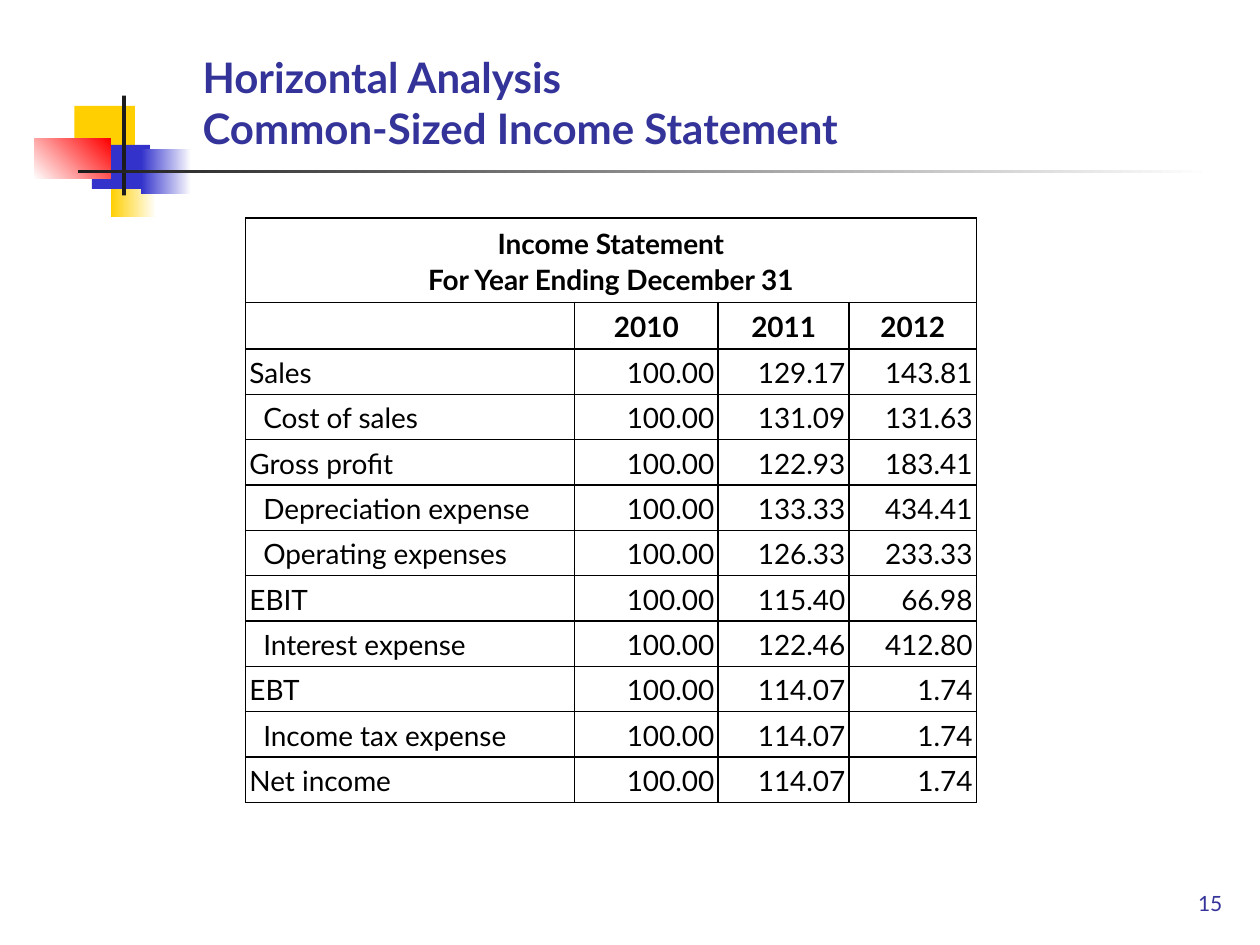
from dataclasses import dataclass
from lxml import etree
from pptx import Presentation
from pptx import util as u
from pptx.dml.color import RGBColor
from pptx.enum import shapes, text
from pptx.oxml import ns


@dataclass(frozen=True)
class Theme:
    font: str = "Lato"
    title: str = "333399"
    ink: str = "000000"
    bar: str = "1C1C1C"
    yellow: str = "FFCF01"
    blue: str = "3333CC"
    red: str = "FF0000"
    white: str = "FFFFFF"
    title_size: int = 24
    body_size: int = 16
    number_size: int = 12


T = Theme()


def add_run(p, words, size, color, bold=False):
    r = p.add_run()
    r.text = words
    r.font.name = T.font
    r.font.size = u.Pt(size)
    r.font.bold = bold
    r.font.color.rgb = RGBColor.from_string(color)


def add_border(cell):
    tcPr = cell._tc.get_or_add_tcPr()
    for side in ("lnL", "lnR", "lnT", "lnB"):
        ln = etree.SubElement(tcPr, ns.qn(f"a:{side}"), w=str(u.Pt(1)))
        fill = etree.SubElement(ln, ns.qn("a:solidFill"))
        etree.SubElement(fill, ns.qn("a:srgbClr"), val=T.ink)


prs = Presentation()
prs.slide_width, prs.slide_height = u.Inches(10), u.Inches(7.5)
s = prs.slides.add_slide(prs.slide_layouts[6])

ornament = [
    ((0.88, 1.5, 0.36, 0.22), (T.yellow, T.white), 0),
    ((0.59, 0.84, 0.48, 0.35), (T.yellow,), 0),
    ((0.73, 1.15, 0.46, 0.35), (T.blue,), 0),
    ((1.12, 1.18, 0.4, 0.36), (T.blue, T.white), 0),
    ((0.27, 1.1, 0.61, 0.32), (T.white, T.red), 45),
    ((0.97, 0.76, 0.03, 0.79), (T.bar,), 0),
    ((0.62, 1.35, 9, 0.02), (T.bar, T.white), 0),
]
ornament[0] = ((0.88, 1.2, 0.36, 0.52),) + ornament[0][1:]
for box, colors, angle in ornament:
    sp = s.shapes.add_shape(shapes.MSO_SHAPE.RECTANGLE, *map(u.Inches, box))
    sp.shadow.inherit = False
    sp.line.fill.background()
    if len(colors) == 1:
        sp.fill.solid()
        sp.fill.fore_color.rgb = RGBColor.from_string(colors[0])
    else:
        sp.fill.gradient()
        sp.fill.gradient_angle = angle
        for stop, color in zip(sp.fill.gradient_stops, colors):
            stop.color.rgb = RGBColor.from_string(color)

labels = [
    ((1.51, 0.7, 6.48, 0.56), ["Horizontal Analysis", "Common-Sized Income Statement"],
     T.title_size, True, text.PP_ALIGN.LEFT),
    ((7.52, 6.82, 2.28, 0.5), ["15"], T.number_size, False, text.PP_ALIGN.RIGHT),
]
for box, lines, size, bold, align in labels:
    tf = s.shapes.add_textbox(*map(u.Inches, box)).text_frame
    tf.word_wrap = True
    tf.vertical_anchor = text.MSO_ANCHOR.BOTTOM
    p = tf.paragraphs[0]
    p.alignment = align
    for i, line in enumerate(lines):
        if i:
            p.add_line_break()
        add_run(p, line, size, T.title, bold)

heading = ["Income Statement", "For Year Ending December 31"]
years = ["", "2010", "2011", "2012"]
items = [
    ("Sales", 0, "129.17", "143.81"),
    ("Cost of sales", 1, "131.09", "131.63"),
    ("Gross profit", 0, "122.93", "183.41"),
    ("Depreciation expense", 1, "133.33", "434.41"),
    ("Operating expenses", 1, "126.33", "233.33"),
    ("EBIT", 0, "115.40", "66.98"),
    ("Interest expense", 1, "122.46", "412.80"),
    ("EBT", 0, "114.07", "1.74"),
    ("Income tax expense", 1, "114.07", "1.74"),
    ("Net income", 0, "114.07", "1.74"),
]
grid = [["\n".join(heading), "", "", ""], years]
grid += [[name, "100.00", second, third] for name, level, second, third in items]
widths = [2.61, 1.14, 1.04, 1.01]
heights = [0.67, 0.37] + [0.36] * len(items)

table = s.shapes.add_table(
    len(grid), len(widths), u.Inches(1.95), u.Inches(1.73),
    u.Inches(sum(widths)), u.Inches(sum(heights))).table
table.first_row = table.horz_banding = False
for column, width in zip(table.columns, widths):
    column.width = u.Inches(width)
for row, height in zip(table.rows, heights):
    row.height = u.Inches(height)
table.cell(0, 0).merge(table.cell(0, len(widths) - 1))

for i, values in enumerate(grid):
    for j, value in enumerate(values):
        cell = table.cell(i, j)
        add_border(cell)
        cell.fill.background()
        cell.vertical_anchor = text.MSO_ANCHOR.MIDDLE
        cell.margin_left = cell.margin_right = u.Inches(0.03)
        cell.margin_top = cell.margin_bottom = u.Inches(0.03)
        tf = cell.text_frame
        for n, line in enumerate(value.split("\n")):
            p = tf.add_paragraph() if n else tf.paragraphs[0]
            p.line_spacing = 1.07
            p.font.size = u.Pt(T.body_size)
            if i < 2:
                p.alignment = text.PP_ALIGN.CENTER
            elif j:
                p.alignment = text.PP_ALIGN.RIGHT
            elif items[i - 2][1]:
                p._p.get_or_add_pPr().set("marL", str(u.Inches(0.11)))
            if line:
                add_run(p, line, T.body_size, T.ink, i < 2)

prs.save("out.pptx")
